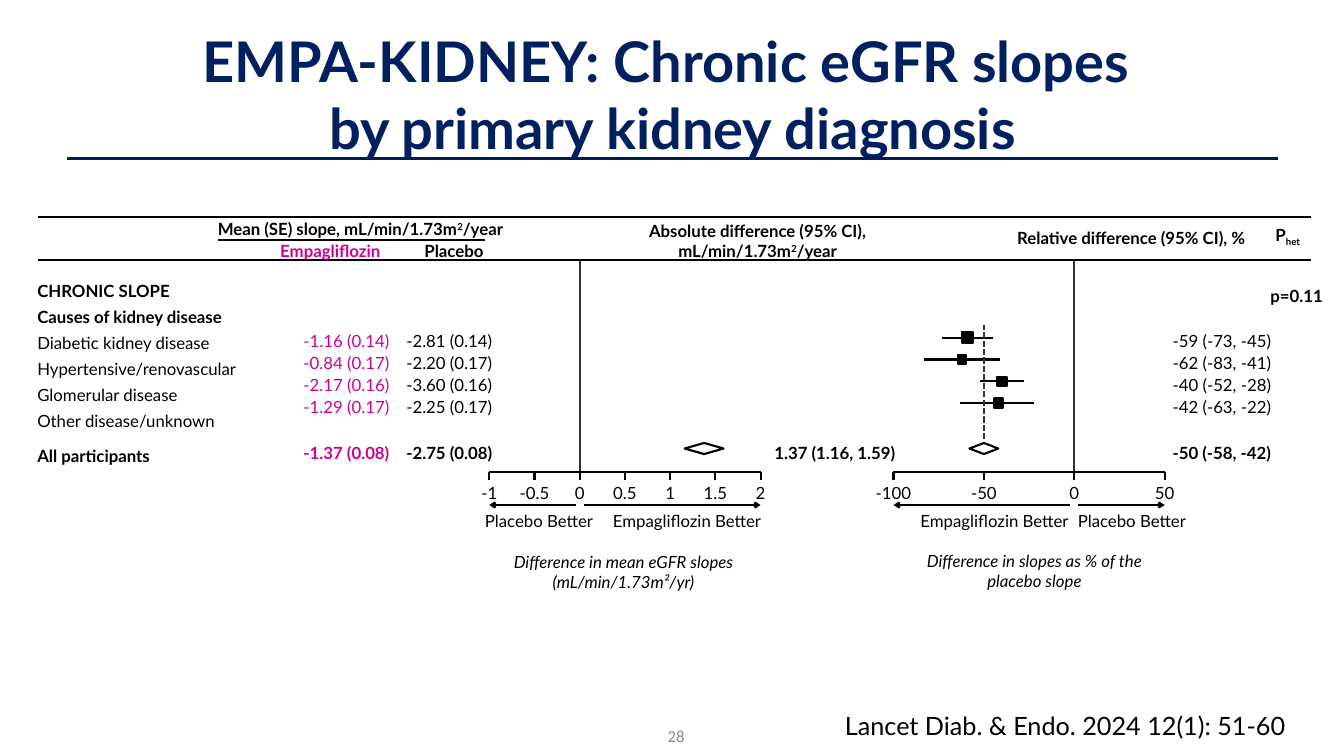
from dataclasses import dataclass
from typing import Optional

from lxml import etree
from pptx import Presentation
from pptx.dml.color import RGBColor
from pptx.enum.dml import MSO_LINE
from pptx.enum.shapes import MSO_CONNECTOR, MSO_SHAPE
from pptx.enum.text import MSO_ANCHOR, MSO_AUTO_SIZE, PP_ALIGN
from pptx.oxml.ns import qn
from pptx.util import Emu, Inches, Pt

LEFT, CENTER, RIGHT = PP_ALIGN.LEFT, PP_ALIGN.CENTER, PP_ALIGN.RIGHT
MIDDLE = MSO_ANCHOR.MIDDLE
GROW, FIXED = MSO_AUTO_SIZE.SHAPE_TO_FIT_TEXT, MSO_AUTO_SIZE.NONE
STRAIGHT, SHORT_DASH = MSO_CONNECTOR.STRAIGHT, MSO_LINE.SQUARE_DOT
SQUARE, DIAMOND = MSO_SHAPE.RECTANGLE, MSO_SHAPE.DIAMOND

BLACK = RGBColor(0x00, 0x00, 0x00)
CHARCOAL = RGBColor(0x33, 0x33, 0x33)
GREY = RGBColor(0x8C, 0x8C, 0x8C)
MAGENTA = RGBColor(0xCC, 0x00, 0x99)
NAVY = RGBColor(0x00, 0x20, 0x60)
RULE_NAVY = RGBColor(0x00, 0x1C, 0x54)

CELL = Inches(0.1)  # side of one grid column or row
AXIS_ROW, TICK_ROW, TICK_LABEL_ROW = 46.8, 47.6, 47.9
ARROW_ROW, ARROW_LABEL_ROW = 50.1, 50.7
FIRST_VALUE_ROW, FIRST_MARK_ROW, ROW_STEP = 32.8, 33.5, 2.17
TOTAL_VALUE_ROW, TOTAL_MARK_ROW = 43.9, 44.5
EMPAGLIFLOZIN_COLUMN, PLACEBO_COLUMN = 30.1, 40.3
ABSOLUTE_COLUMN, RELATIVE_COLUMN = 76.8, 116.3
ZERO_GAP = 0.4


@dataclass(frozen=True)
class Label:
    text: str
    column: float
    row: float
    width: float
    height: float = 2
    align: PP_ALIGN = LEFT
    bold: bool = False
    italic: bool = False
    color: RGBColor = BLACK
    size: float = 12
    font: str = "Lato"
    wrap: bool = False
    script: int = 0


@dataclass(frozen=True)
class Axis:
    zero: float
    unit: float
    ticks: tuple[str, ...]
    left_label: Label
    right_label: Label

    def column(self, value: float) -> float:
        return self.zero + value * self.unit


@dataclass(frozen=True)
class Diagnosis:
    name: str
    empagliflozin: str
    placebo: str
    relative: tuple[int, int, int]
    marker: float = 0


DIAGNOSES = [
    Diagnosis("Diabetic kidney disease", "-1.16 (0.14)", "-2.81 (0.14)", (-59, -73, -45), 1.05),
    Diagnosis("Hypertensive/renovascular", "-0.84 (0.17)", "-2.20 (0.17)", (-62, -83, -41), 0.85),
    Diagnosis("Glomerular disease", "-2.17 (0.16)", "-3.60 (0.16)", (-40, -52, -28), 0.95),
    Diagnosis("Other disease/unknown", "-1.29 (0.17)", "-2.25 (0.17)", (-42, -63, -22), 0.95),
]
TOTAL = Diagnosis("All participants", "-1.37 (0.08)", "-2.75 (0.08)", (-50, -58, -42))
TOTAL_ABSOLUTE = (1.37, 1.16, 1.59)

ABSOLUTE = Axis(57.5, 8.97, ("-1", "-0.5", "0", "0.5", "1", "1.5", "2"),
                Label("Placebo Better", 48.1, ARROW_LABEL_ROW, 11.4),
                Label("Empagliflozin Better", 60.8, ARROW_LABEL_ROW, 15.7))
RELATIVE = Axis(106.55, 0.1793, ("-100", "-50", "0", "50"),
                Label("Empagliflozin Better", 91.3, ARROW_LABEL_ROW, 15.7),
                Label("Placebo Better", 106.9, ARROW_LABEL_ROW, 11.4))

LABELS = [
    Label("Mean (SE) slope, mL/min/1.73m|2|/year", 18.4, 21.7, 34.7, align=CENTER, bold=True,
          wrap=True, script=30),
    Label("Empagliflozin", 27.8, 23.9, 11, bold=True, color=MAGENTA),
    Label("Placebo", 42.1, 23.9, 6.5, bold=True),
    Label("Absolute difference (95% CI),\nmL/min/1.73m|2|/year", 63.5, 21.9, 23.3, 4,
          align=CENTER, bold=True, script=30),
    Label("Relative difference (95% CI), %", 99.8, 22.6, 24.8, align=CENTER, bold=True),
    Label("P|het", 126.5, 22.3, 2.8, bold=True, script=-25),
    Label("p=0.11", 126, 28.3, 5.5, bold=True),
    Label("Difference in mean eGFR slopes (mL/min/1.73m²/yr)", 45.9, 54.7, 31.9, 4,
          align=CENTER, italic=True, wrap=True),
    Label("Difference in slopes as % of the placebo slope", 89.2, 54.6, 26.8, 4,
          align=CENTER, italic=True, wrap=True),
    Label("Lancet Diab. & Endo. 2024 12(1): 51-60", 73.3, 70.5, 64.7, 3,
          align=CENTER, size=18, wrap=True),
    Label("28", 38.8, 72, 29.1, align=RIGHT, color=GREY, font="Calibri", wrap=True),
]


def cells(count: float) -> Emu:
    return Emu(round(count * CELL))


def add_label(page, label: Label):
    """Draw a label; every second part between bars is raised or lowered."""
    box = page.shapes.add_textbox(cells(label.column), cells(label.row),
                                  cells(label.width), cells(label.height))
    frame = box.text_frame
    frame.margin_left = frame.margin_right = frame.margin_top = frame.margin_bottom = 0
    frame.word_wrap = label.wrap
    frame.auto_size = GROW
    frame.text = label.text.replace("|", "")
    for para, line in zip(frame.paragraphs, label.text.split("\n")):
        parts = line.split("|")
        para.runs[0].text = parts[0]
        for part in parts[1:]:
            para.add_run().text = part
        para.alignment = label.align
        for index, span in enumerate(para.runs):
            span.font.name = label.font
            span.font.size = Pt(label.size)
            span.font.bold = label.bold
            span.font.italic = label.italic
            span.font.color.rgb = label.color
            if index % 2:
                span._r.get_or_add_rPr().set("baseline", str(label.script * 1000))
    return box


def add_line(page, start: tuple[float, float], end: tuple[float, float], width: float = 1.5,
             color: RGBColor = BLACK, dash: Optional[MSO_LINE] = None, arrow: bool = False) -> None:
    line = page.shapes.add_connector(STRAIGHT, *map(cells, start + end))
    line.line.width = Pt(width)
    line.line.color.rgb = color
    if dash is not None:
        line.line.dash_style = dash
    if arrow:
        etree.SubElement(line.line._get_or_add_ln(), qn("a:tailEnd"), type="arrow", w="sm", len="sm")
    etree.SubElement(line._element.spPr, qn("a:effectLst"))


def add_mark(page, kind: MSO_SHAPE, column: float, row: float, width: float, height: float) -> None:
    """Draw a marker centred on the given place; only squares are filled."""
    mark = page.shapes.add_shape(kind, cells(column - width / 2), cells(row - height / 2),
                                 cells(width), cells(height))
    mark.shadow.inherit = False
    mark.line.color.rgb = BLACK
    mark.line.width = Pt(1.5)
    if kind == SQUARE:
        mark.fill.solid()
        mark.fill.fore_color.rgb = BLACK
    else:
        mark.fill.background()


def add_diamond(page, axis: Axis, low: float, high: float) -> None:
    left, right = axis.column(low), axis.column(high)
    add_mark(page, DIAMOND, (left + right) / 2, TOTAL_MARK_ROW, right - left, 1.1)


def add_axis(page, axis: Axis) -> None:
    first, last = (axis.column(float(axis.ticks[end])) for end in (0, -1))
    add_line(page, (axis.zero, AXIS_ROW), (axis.zero, 25.9), color=CHARCOAL)
    add_line(page, (first, AXIS_ROW), (last, AXIS_ROW))
    for tick in axis.ticks:
        column = axis.column(float(tick))
        add_line(page, (column, AXIS_ROW), (column, TICK_ROW))
        add_label(page, Label(tick, column - 2, TICK_LABEL_ROW, 4, align=CENTER))
    for label, side, tip in ((axis.left_label, -1, first), (axis.right_label, 1, last)):
        add_line(page, (axis.zero + side * ZERO_GAP, ARROW_ROW), (tip, ARROW_ROW), arrow=True)
        add_label(page, label)


def add_values(page, diagnosis: Diagnosis, row: float, bold: bool = False) -> None:
    estimate, low, high = diagnosis.relative
    add_label(page, Label(diagnosis.empagliflozin, EMPAGLIFLOZIN_COLUMN, row, 9.1, bold=bold, color=MAGENTA))
    add_label(page, Label(diagnosis.placebo, PLACEBO_COLUMN, row, 9.1, bold=bold))
    add_label(page, Label(f"{estimate} ({low}, {high})", RELATIVE_COLUMN, row, 10.6, bold=bold))


def add_row_names(page) -> None:
    names = ["CHRONIC SLOPE", "Causes of kidney disease", *(d.name for d in DIAGNOSES), TOTAL.name]
    box = add_label(page, Label("\n".join(names), 3.7, 27.2, 25.2, 18.5, wrap=True))
    paras = box.text_frame.paragraphs
    for para in paras:
        para.line_spacing = 1.3
    for para in (*paras[:2], paras[-1]):
        para.runs[0].font.bold = True
    paras[-1].space_before = Pt(6)


def add_title(page) -> None:
    title = page.shapes.title
    title.left, title.top, title.width, title.height = map(cells, (6.7, 3, 120, 12.5))
    frame = title.text_frame
    frame.text = "EMPA-KIDNEY: Chronic eGFR slopes \vby primary kidney diagnosis"
    frame.auto_size, frame.vertical_anchor, frame.word_wrap = FIXED, MIDDLE, True
    para = frame.paragraphs[0]
    para.alignment = CENTER
    for span in para.runs:
        span.font.name, span.font.size, span.font.bold = "Lato", Pt(40), True
        span.font.color.rgb = NAVY


def main() -> None:
    deck = Presentation()
    deck.slide_width, deck.slide_height = Inches(13.33), Inches(7.5)
    page = deck.slides.add_slide(deck.slide_layouts[5])
    add_title(page)
    add_line(page, (6.6, 15.7), (126.8, 15.7), 2.25, RULE_NAVY)
    for left, right, row in ((3.8, 130, 21.5), (21.6, 48.1, 23.8), (3.8, 130, 25.8)):
        add_line(page, (left, row), (right, row), 1.25)
    for label in LABELS:
        add_label(page, label)
    add_row_names(page)
    for axis in (ABSOLUTE, RELATIVE):
        add_axis(page, axis)
    for index, diagnosis in enumerate(DIAGNOSES):
        add_values(page, diagnosis, FIRST_VALUE_ROW + index * ROW_STEP)
        row = FIRST_MARK_ROW + index * ROW_STEP
        estimate, low, high = map(RELATIVE.column, diagnosis.relative)
        add_line(page, (low, row), (high, row))
        add_mark(page, SQUARE, estimate, row, diagnosis.marker, diagnosis.marker)
    add_values(page, TOTAL, TOTAL_VALUE_ROW, bold=True)
    estimate, low, high = TOTAL_ABSOLUTE
    add_label(page, Label(f"{estimate} ({low}, {high})", ABSOLUTE_COLUMN, TOTAL_VALUE_ROW, 12.9, bold=True))
    add_diamond(page, ABSOLUTE, low, high)
    add_diamond(page, RELATIVE, *TOTAL.relative[1:])
    overall = RELATIVE.column(TOTAL.relative[0])
    add_line(page, (overall, 43.6), (overall, 32.2), color=CHARCOAL, dash=SHORT_DASH)
    deck.save("out.pptx")


if __name__ == "__main__":
    main()
